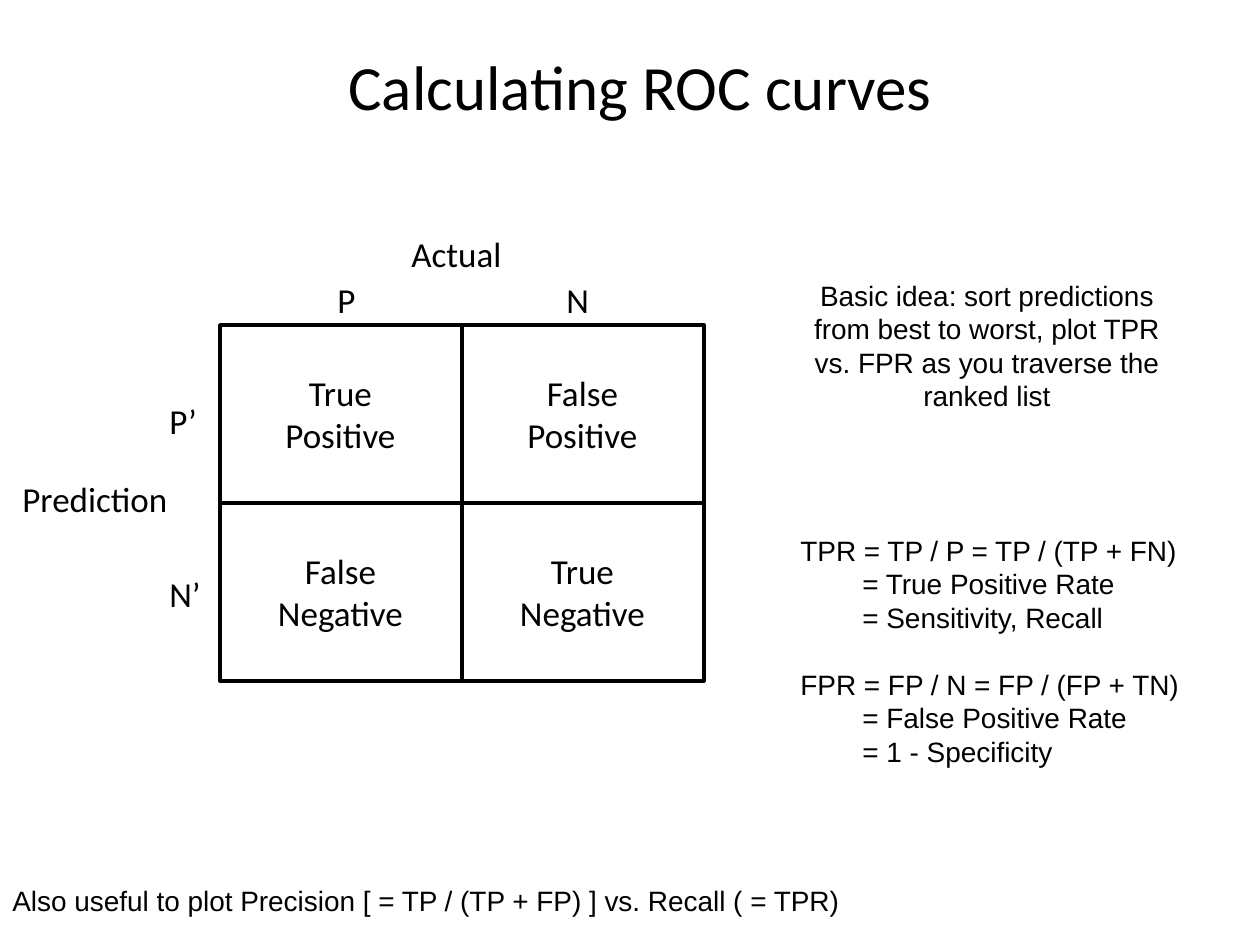
from pptx import Presentation
from pptx.dml.color import RGBColor
from pptx.enum.shapes import MSO_SHAPE
from pptx.enum.text import MSO_AUTO_SIZE, PP_ALIGN
from pptx.util import Pt

RECTANGLE = MSO_SHAPE.RECTANGLE
GROW = MSO_AUTO_SIZE.SHAPE_TO_FIT_TEXT
LEFT, CENTER = PP_ALIGN.LEFT, PP_ALIGN.CENTER
PX = 914400 // 126

THEME = {
    "ink": RGBColor(0, 0, 0),
    "line": Pt(2),
    "title": {"name": "Calibri", "size": Pt(36)},
    "label": {"name": "Calibri", "size": Pt(20)},
    "note": {"name": "Arial", "size": Pt(16)},
}

# Content: boxes are left, top, width, height in px
TITLE = ("Calculating ROC curves", (336, 41, 615, 90))
LABELS = [
    ("Actual", (399, 226, 117, 55)),
    ("Prediction", (10, 471, 173, 55)),
    ("P", (325, 272, 44, 55)),
    ("N", (554, 272, 48, 55)),
    ("P’", (157, 393, 53, 55)),
    ("N’", (157, 566, 57, 55)),
]
MATRIX = [
    [("True", "Positive"), ("False", "Positive")],
    [("False", "Negative"), ("True", "Negative")],
]
IDEA = (
    "Basic idea: sort predictions from best to worst, plot TPR vs. FPR "
    "as you traverse the ranked list",
    (798, 272, 378, 149),
)
RATES = [
    ("TPR = TP / P = TP / (TP + FN)", "= True Positive Rate", "= Sensitivity, Recall"),
    ("FPR = FP / N = FP / (FP + TN)", "= False Positive Rate", "= 1 - Specificity"),
]
RATES_BOX = (788, 527, 410, 251)
FOOTNOTE = (
    "Also useful to plot Precision [ = TP / (TP + FP) ] vs. Recall ( = TPR)",
    (0, 877, 1071, 47),
)

# Layout of the confusion matrix and the rate formulas
MATRIX_LEFT, MATRIX_TOP = 220, 325
CELL_WIDTH, CELL_HEIGHT = 242, 178
CELL_TEXT_WIDTHS = (137, 151)
CELL_TEXT_HEIGHT = 97
RATE_INDENT = 62
RATE_GAP = Pt(19)


def scaled(box):
    return [value * PX for value in box]


def add_text(page, lines, box, style, align=LEFT, wrap=False):
    """Add a text box with one paragraph per line and return its paragraphs."""
    frame = page.shapes.add_textbox(*scaled(box)).text_frame
    frame.word_wrap = wrap
    frame.auto_size = GROW
    frame.text = "\n".join(lines)
    for para in frame.paragraphs:
        para.alignment = align
        for span in para.runs:
            for key, value in THEME[style].items():
                setattr(span.font, key, value)
            span.font.color.rgb = THEME["ink"]
    return frame.paragraphs


def add_cell(page, row, column):
    left = MATRIX_LEFT + column * CELL_WIDTH
    top = MATRIX_TOP + row * CELL_HEIGHT
    cell = page.shapes.add_shape(
        RECTANGLE, *scaled((left, top, CELL_WIDTH, CELL_HEIGHT)))
    cell.shadow.inherit = False
    cell.fill.background()
    cell.line.color.rgb = THEME["ink"]
    cell.line.width = THEME["line"]
    width = CELL_TEXT_WIDTHS[row]
    box = (left + (CELL_WIDTH - width) // 2,
           top + (CELL_HEIGHT - CELL_TEXT_HEIGHT) // 2,
           width, CELL_TEXT_HEIGHT)
    add_text(page, MATRIX[row][column], box, "label", CENTER)


def add_rates(page):
    lines = [line for group in RATES for line in group]
    paras = add_text(page, lines, RATES_BOX, "note")
    for index, para in enumerate(paras):
        group, line = divmod(index, len(RATES[0]))
        if line:
            para._p.get_or_add_pPr().set("marL", str(RATE_INDENT * PX))
        elif group:
            para.space_before = RATE_GAP


def main():
    deck = Presentation()
    deck.slide_width, deck.slide_height = scaled((1260, 945))
    page = deck.slides.add_slide(deck.slide_layouts[6])

    # Title
    add_text(page, [TITLE[0]], TITLE[1], "title")

    # Confusion matrix
    for row, cells in enumerate(MATRIX):
        for column in range(len(cells)):
            add_cell(page, row, column)
    for label, box in LABELS:
        add_text(page, [label], box, "label")

    # Notes
    add_text(page, [IDEA[0]], IDEA[1], "note", CENTER, wrap=True)
    add_rates(page)
    add_text(page, [FOOTNOTE[0]], FOOTNOTE[1], "note", wrap=True)

    deck.save("out.pptx")


if __name__ == "__main__":
    main()
